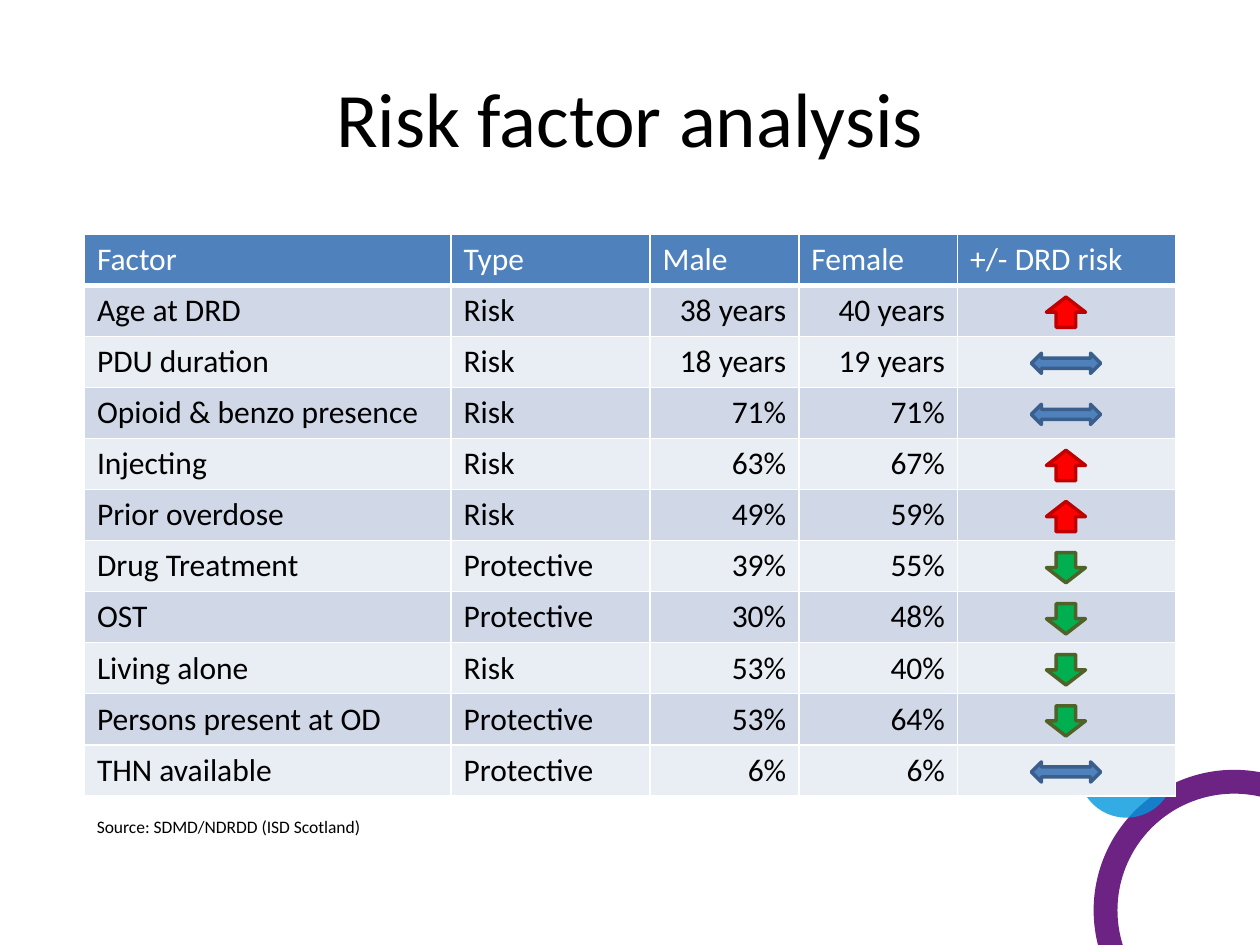
from dataclasses import dataclass

from lxml import etree
from pptx import Presentation, util as u
from pptx.dml.color import RGBColor
from pptx.enum import shapes, text
from pptx.oxml.ns import qn

FONT = "Calibri"
COLORS = {
    "text": "000000", "white": "FFFFFF", "header": "4F81BD",
    "band_dark": "D0D8E8", "band_light": "E9EDF4",
    "ring": "6C2383", "disc": "0096DC",
    "steady": "4F81BD", "steady_line": "3A5F8C",
    "higher": "FF0000", "higher_line": "C00000",
    "lower": "00B050", "lower_line": "4F6228",
}
SHAPE = shapes.MSO_SHAPE
ALIGN = text.PP_ALIGN


@dataclass(frozen=True)
class Arrow:
    kind: SHAPE
    color: str
    width: float
    height: float


@dataclass(frozen=True)
class Factor:
    name: str
    type: str
    male: str
    female: str
    effect: Arrow


HIGHER = Arrow(SHAPE.UP_ARROW, "higher", 0.31, 0.24)
LOWER = Arrow(SHAPE.DOWN_ARROW, "lower", 0.31, 0.24)
STEADY = Arrow(SHAPE.LEFT_RIGHT_ARROW, "steady", 0.55, 0.16)

HEADINGS = ["Factor", "Type", "Male", "Female", "+/- DRD risk"]
FACTORS = [
    Factor("Age at DRD", "Risk", "38 years", "40 years", HIGHER),
    Factor("PDU duration", "Risk", "18 years", "19 years", STEADY),
    Factor("Opioid & benzo presence", "Risk", "71%", "71%", STEADY),
    Factor("Injecting", "Risk", "63%", "67%", HIGHER),
    Factor("Prior overdose", "Risk", "49%", "59%", HIGHER),
    Factor("Drug Treatment", "Protective", "39%", "55%", LOWER),
    Factor("OST", "Protective", "30%", "48%", LOWER),
    Factor("Living alone", "Risk", "53%", "40%", LOWER),
    Factor("Persons present at OD", "Protective", "53%", "64%", LOWER),
    Factor("THN available", "Protective", "6%", "6%", STEADY),
]

TABLE_LEFT, TABLE_TOP, TABLE_HEIGHT = 0.67, 1.86, 4.46
COLUMN_WIDTHS = [2.91, 1.58, 1.18, 1.26, 1.73]
ROW_HEIGHT = TABLE_HEIGHT / (len(FACTORS) + 1)
ARROW_CENTER = 8.46


def rgb(name: str) -> RGBColor:
    return RGBColor.from_string(COLORS[name])


def write(frame, words: str, size: float, color: str, align=ALIGN.LEFT) -> None:
    paragraph = frame.paragraphs[0]
    paragraph.text = words
    paragraph.alignment = align
    paragraph.font.name = FONT
    paragraph.font.size = u.Pt(size)
    paragraph.font.bold = False
    paragraph.font.color.rgb = rgb(color)


def add_text(slide, left: float, top: float, width: float, height: float,
             words: str, size: float, align=ALIGN.LEFT):
    box = slide.shapes.add_textbox(
        u.Inches(left), u.Inches(top), u.Inches(width), u.Inches(height))
    box.text_frame.word_wrap = True
    write(box.text_frame, words, size, "text", align)
    return box


def add_filled(slide, kind: SHAPE, left: float, top: float,
               width: float, height: float, color: str):
    shape = slide.shapes.add_shape(
        kind, u.Inches(left), u.Inches(top), u.Inches(width), u.Inches(height))
    shape.shadow.inherit = False
    shape.fill.solid()
    shape.fill.fore_color.rgb = rgb(color)
    shape.line.fill.background()
    return shape


def add_arrow(slide, arrow: Arrow, center_x: float, center_y: float) -> None:
    shape = add_filled(slide, arrow.kind, center_x - arrow.width / 2,
                       center_y - arrow.height / 2, arrow.width, arrow.height,
                       arrow.color)
    shape.line.color.rgb = rgb(arrow.color + "_line")
    shape.line.width = u.Pt(2)


def set_borders(cell, bottom: float = 1) -> None:
    properties = cell._tc.get_or_add_tcPr()
    widths = {"a:lnL": 1, "a:lnR": 1, "a:lnT": 1, "a:lnB": bottom}
    for position, (side, width) in enumerate(widths.items()):
        line = etree.Element(qn(side), w=str(u.Pt(width)))
        fill = etree.SubElement(line, qn("a:solidFill"))
        etree.SubElement(fill, qn("a:srgbClr"), val=COLORS["white"])
        properties.insert(position, line)


def add_factor_table(slide) -> None:
    rows = [HEADINGS] + [[f.name, f.type, f.male, f.female, ""] for f in FACTORS]
    table = slide.shapes.add_table(
        len(rows), len(HEADINGS), u.Inches(TABLE_LEFT), u.Inches(TABLE_TOP),
        u.Inches(sum(COLUMN_WIDTHS)), u.Inches(TABLE_HEIGHT)).table
    table.first_row = table.horz_banding = False
    for column, width in zip(table.columns, COLUMN_WIDTHS):
        column.width = u.Inches(width)
    for r, words in enumerate(rows):
        table.rows[r].height = u.Inches(ROW_HEIGHT)
        is_header = r == 0
        band = "header" if is_header else "band_dark" if r % 2 else "band_light"
        for c, word in enumerate(words):
            cell = table.cell(r, c)
            is_value = not is_header and c in (2, 3)
            write(cell.text_frame, word, 18, "white" if is_header else "text",
                  ALIGN.RIGHT if is_value else ALIGN.LEFT)
            cell.fill.solid()
            cell.fill.fore_color.rgb = rgb(band)
            set_borders(cell, bottom=3 if is_header else 1)


def main() -> None:
    presentation = Presentation()
    presentation.slide_width = u.Inches(10)
    presentation.slide_height = u.Inches(7.5)
    slide = presentation.slides.add_slide(presentation.slide_layouts[6])

    # Corner decoration
    ring = add_filled(slide, SHAPE.DONUT, 8.68, 6.11, 2.23, 2.23, "ring")
    ring.adjustments[0] = 0.085
    disc = add_filled(slide, SHAPE.OVAL, 8.56, 5.73, 0.76, 0.76, "disc")
    color = disc._element.spPr.find(qn("a:solidFill")).find(qn("a:srgbClr"))
    etree.SubElement(color, qn("a:alpha"), val="80000")

    # Title
    title = add_text(slide, 0.5, 0.3, 9, 1.25, "Risk factor analysis", 44,
                     ALIGN.CENTER)
    title.text_frame.vertical_anchor = text.MSO_ANCHOR.MIDDLE

    # Table with one effect arrow per factor
    add_factor_table(slide)
    for row, factor in enumerate(FACTORS, start=1):
        center_y = TABLE_TOP + (row + 0.5) * ROW_HEIGHT + 0.01
        add_arrow(slide, factor.effect, ARROW_CENTER, center_y)

    # Source line
    add_text(slide, 0.67, 6.43, 4.17, 0.27,
             "Source: SDMD/NDRDD (ISD Scotland)", 10)

    presentation.save("out.pptx")


if __name__ == "__main__":
    main()
